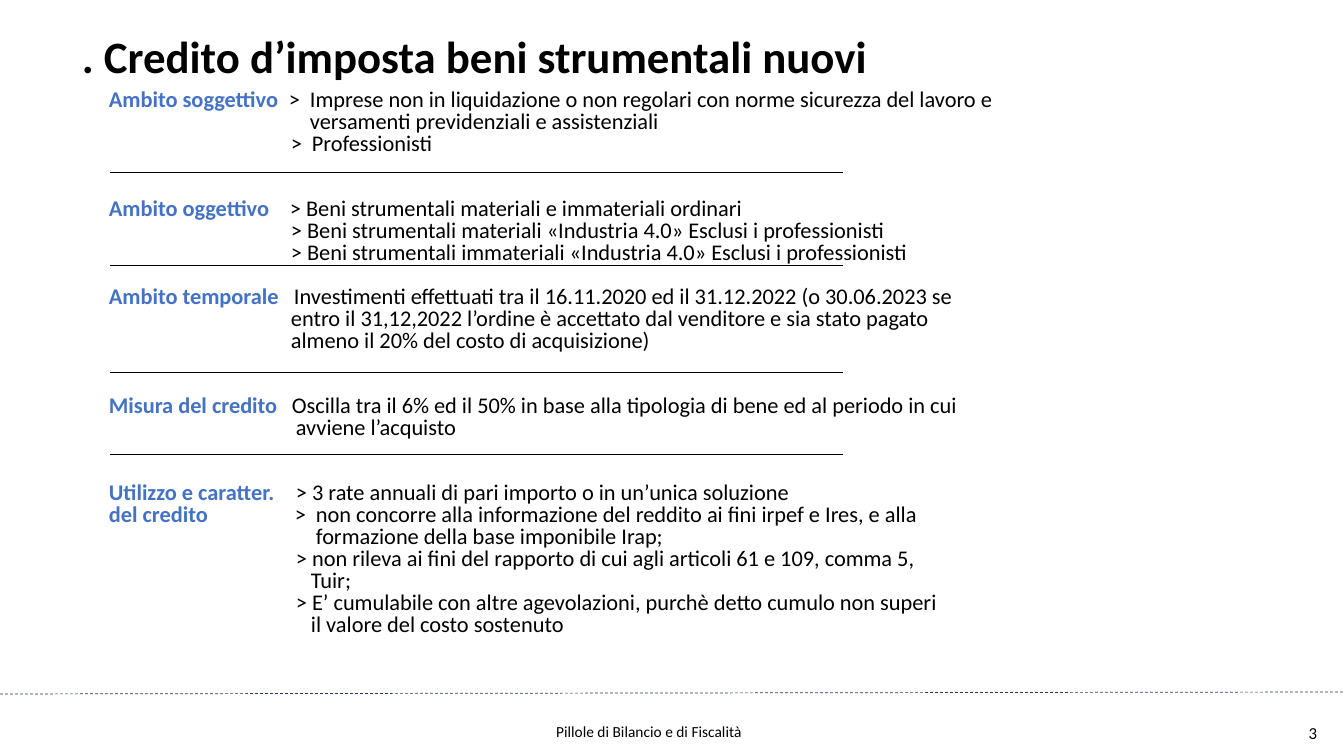
from pptx import Presentation
from pptx.dml.color import RGBColor
from pptx.enum.dml import MSO_LINE
from pptx.enum.shapes import MSO_CONNECTOR
from pptx.enum.text import MSO_ANCHOR as ANCHOR, PP_ALIGN as ALIGN
from pptx.oxml.ns import qn
from pptx.util import Pt
from lxml.etree import SubElement

PX = 914400 / 100.8
THEME = {
    "font": "Calibri",
    "ink": RGBColor(0x00, 0x00, 0x00),
    "label": RGBColor(0x44, 0x72, 0xC4),
    "footer_rule": RGBColor(0x20, 0x38, 0x64),
    "title_size": Pt(32),
    "body_size": Pt(16),
    "number_size": Pt(12),
    "footer_size": Pt(11),
    "line_pitch": 15.6,
    "line_gap": 6,
}


def px(value):
    return round(value * PX)


def add_run(paragraph, text, size, color=THEME["ink"], bold=False):
    run = paragraph.add_run()
    run.text = text
    run.font.color.rgb = color
    for name, value in {"name": THEME["font"], "size": size, "bold": bold}.items():
        setattr(run.font, name, value)


prs = Presentation()
prs.slide_width, prs.slide_height = px(1344), px(756)
slide = prs.slides.add_slide(prs.slide_layouts[6])
shapes = slide.shapes

# Rules: start x, start y, end x, end y, colour, dash
section_rules = [(110, y, 843, y, THEME["ink"], None) for y in (172, 265, 372, 454)]
footer_rule = (0, 694, 1344, 692, THEME["footer_rule"], MSO_LINE.DASH)
for x1, y1, x2, y2, color, dash in [footer_rule, *section_rules]:
    rule = shapes.add_connector(MSO_CONNECTOR.STRAIGHT, px(x1), px(y1), px(x2), px(y2))
    rule.line.color.rgb = color
    rule.line.width = Pt(0.5)
    if dash:
        rule.line.dash_style = dash
    SubElement(rule._element.spPr, qn("a:effectLst"))

# Title, footer and page number
captions = [
    ((72, 6, 1118, 72), ". Credito d’imposta beni strumentali nuovi",
     THEME["title_size"], True, ANCHOR.MIDDLE, {"alignment": ALIGN.LEFT, "line_spacing": 1.5}),
    ((465, 717, 368, 29), "Pillole di Bilancio e di Fiscalità",
     THEME["footer_size"], False, ANCHOR.TOP, {"alignment": ALIGN.CENTER}),
    ((1025, 713, 302, 40), "3",
     THEME["number_size"], False, ANCHOR.MIDDLE, {"alignment": ALIGN.RIGHT}),
]
for box, text, size, bold, anchor, layout in captions:
    frame = shapes.add_textbox(*map(px, box)).text_frame
    frame.word_wrap = True
    frame.vertical_anchor = anchor
    for name, value in layout.items():
        setattr(frame.paragraphs[0], name, value)
    add_run(frame.paragraphs[0], text, size, bold=bold)

# Sections: empty lines above, then lines of label, tab position, text
sections = [
    (0, [
        ("Ambito soggettivo", 180,
         ">\tImprese non in liquidazione o non regolari con norme sicurezza del lavoro e"),
        ("", 201, "versamenti previdenziali e assistenziali"),
        ("", 182, ">\tProfessionisti"),
    ]),
    (2, [
        ("Ambito oggettivo", 181, "> Beni strumentali materiali e immateriali ordinari"),
        ("", 182, "> Beni strumentali materiali «Industria 4.0» Esclusi i professionisti"),
        ("", 182, "> Beni strumentali immateriali «Industria 4.0» Esclusi i professionisti"),
    ]),
    (1, [
        ("Ambito temporale", 185,
         "Investimenti effettuati tra il 16.11.2020 ed il 31.12.2022 (o 30.06.2023 se"),
        ("", 182, "entro il 31,12,2022 l’ordine è accettato dal venditore e sia stato pagato"),
        ("", 182, "almeno il 20% del costo di acquisizione)"),
    ]),
    (2, [
        ("Misura del credito", 183,
         "Oscilla tra il 6% ed il 50% in base alla tipologia di bene ed al periodo in cui"),
        ("", 187, "avviene l’acquisto"),
    ]),
    (2, [
        ("Utilizzo e caratter.", 187, "> 3 rate annuali di pari importo o in un’unica soluzione"),
        ("del credito", 186,
         ">\tnon concorre alla informazione del reddito ai fini irpef e Ires, e alla"),
        ("", 207, "formazione della base imponibile Irap;"),
        ("", 187, "> non rileva ai fini del rapporto di cui agli articoli 61 e 109, comma 5,"),
        ("", 202, "Tuir;"),
        ("", 187, "> E’ cumulabile con altre agevolazioni, purchè detto cumulo non superi"),
        ("", 202, "il valore del costo sostenuto"),
    ]),
]
MARKER_WIDTH = 21

body = shapes.add_textbox(px(99), px(92), px(907), px(564)).text_frame
body.word_wrap = True
paragraph = body.paragraphs[0]
for empty_lines, lines in sections:
    for row, (label, tab, text) in enumerate(lines):
        if label != sections[0][1][0][0]:
            paragraph = body.add_paragraph()
            gap = empty_lines * THEME["line_pitch"] if row == 0 else 0
            paragraph.space_before = Pt(THEME["line_gap"] + gap)
        paragraph.alignment = ALIGN.JUSTIFY
        paragraph.line_spacing = 0.5
        tab_list = SubElement(paragraph._p.get_or_add_pPr(), qn("a:tabLst"))
        for position in (tab, tab + MARKER_WIDTH):
            SubElement(tab_list, qn("a:tab"), pos=str(px(position)), algn="l")
        if label:
            add_run(paragraph, label, THEME["body_size"], THEME["label"], bold=True)
        add_run(paragraph, "\t" + text, THEME["body_size"])

prs.save("out.pptx")
